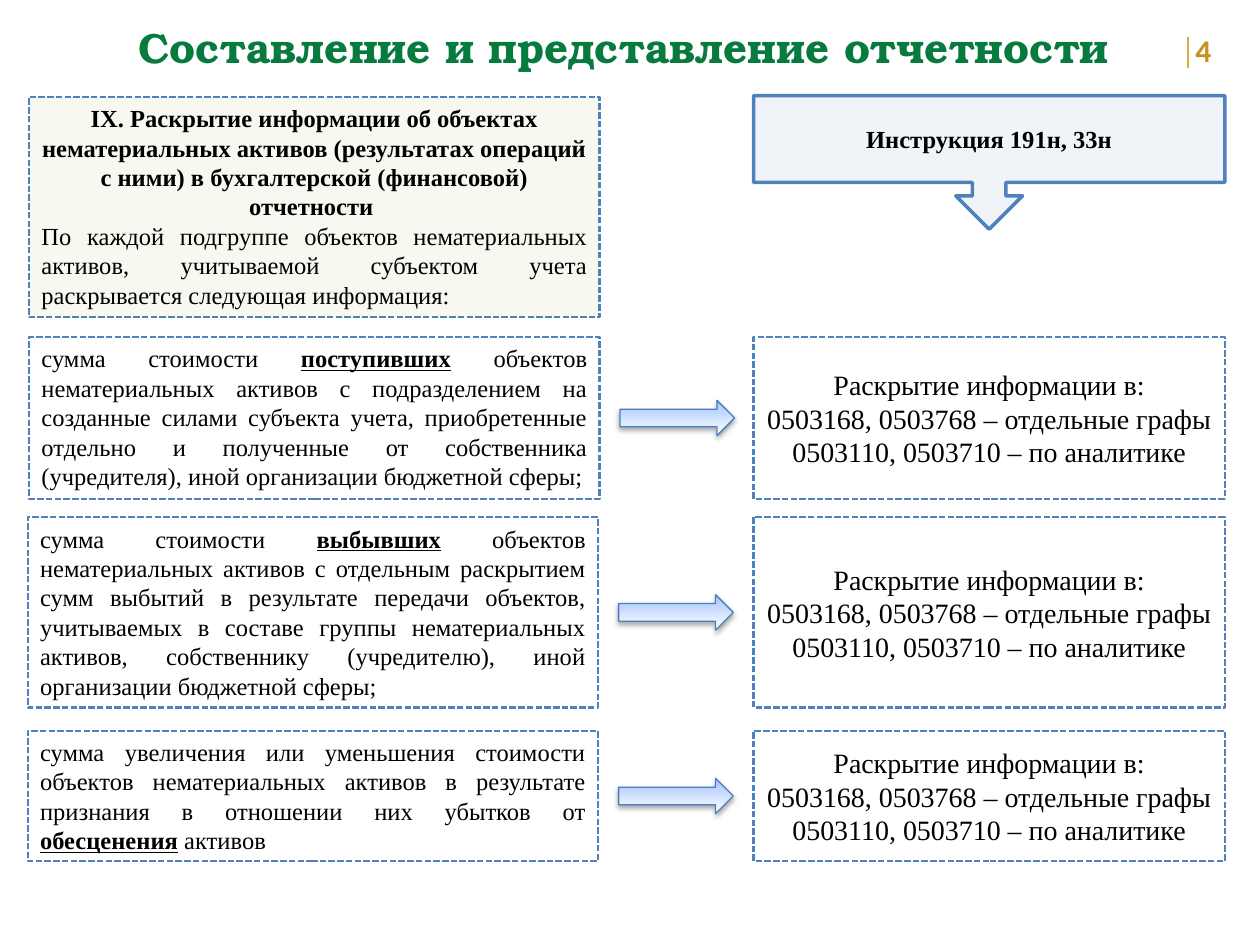
from collections import namedtuple
from dataclasses import dataclass

from lxml import etree
from pptx import Presentation
from pptx import util as u
from pptx.dml.color import RGBColor
from pptx.enum import dml, shapes, text
from pptx.oxml import ns

Pt = u.Pt
Box = namedtuple("Box", "left top width height")


@dataclass(frozen=True)
class Theme:
    title_font: str = "TeX Gyre Bonum"
    number_font: str = "Calibri"
    body_font: str = "Times New Roman"
    title_size: float = 24
    number_size: float = 18
    form_size: float = 16
    body_size: float = 14
    green: str = "077A3E"
    gold: str = "C79023"
    rule: str = "DEAA46"
    black: str = "000000"
    border: str = "4F81BD"
    arrow_border: str = "4B7EBC"
    arrow_light: str = "FFFFFF"
    arrow_dark: str = "A4C4FF"
    intro_fill: str = "EBF1DE"
    callout_fill: str = "DCE6F2"


THEME = Theme()
ALIGN = text.PP_ALIGN
SHAPE = shapes.MSO_SHAPE
LEFT_WIDTH = 326
ARROW_OFFSET = 337.7
ARROW_WIDTH, ARROW_HEIGHT = 65.5, 20.2
RIGHT_LEFT, RIGHT_WIDTH = 430.6, 269.3

INTRO_HEADING = ("IX. Раскрытие информации об объектах нематериальных активов "
                 "(результатах операций с ними) в бухгалтерской (финансовой) отчетности ")
INTRO_BODY = ("По каждой подгруппе объектов нематериальных активов, учитываемой "
              "субъектом учета раскрывается следующая информация:")
FORMS = ["Раскрытие информации в:",
         "0503168, 0503768 – отдельные графы",
         "0503110, 0503710 – по аналитике"]
# Each row: left, top, height, then the text before, inside and after the emphasis.
ROWS = [
    (16.6, 192.6, 92.5, "сумма стоимости ", "поступивших",
     " объектов нематериальных активов с подразделением на созданные силами "
     "субъекта учета, приобретенные отдельно и полученные от собственника "
     "(учредителя), иной организации бюджетной сферы;"),
    (15.8, 295.6, 108.7, "сумма стоимости ", "выбывших",
     " объектов нематериальных активов с отдельным раскрытием сумм выбытий в "
     "результате передачи объектов, учитываемых в составе группы нематериальных "
     "активов, собственнику (учредителю), иной организации бюджетной сферы;"),
    (15.8, 417.6, 74.5,
     "сумма увеличения или уменьшения стоимости объектов нематериальных активов "
     "в результате признания в отношении них убытков от ", "обесценения", " активов"),
]


def rgb(value):
    return RGBColor.from_string(value)


def points(box):
    return [Pt(length) for length in box]


def add_text(frame, content, font=THEME.body_font, size=THEME.body_size,
             color=THEME.black, bold=False, underline=False, align=ALIGN.LEFT,
             new_paragraph=False):
    """Append a run to the last paragraph, or to a new one."""
    paragraph = frame.add_paragraph() if new_paragraph else frame.paragraphs[-1]
    paragraph.alignment = align
    run = paragraph.add_run()
    run.text = content
    run.font.name = font
    run.font.size = Pt(size)
    run.font.color.rgb = rgb(color)
    run.font.bold = bold
    run.font.underline = underline


def add_text_box(slide, box):
    frame = slide.shapes.add_textbox(*points(box)).text_frame
    frame.word_wrap = True
    return frame


def add_panel(slide, box, kind=SHAPE.RECTANGLE, fill=None, opacity=100,
              line_width=1.25, dashed=True, anchor=text.MSO_ANCHOR.TOP):
    """Add an outlined shape and return its text frame."""
    shape = slide.shapes.add_shape(kind, *points(box))
    shape.shadow.inherit = False
    if fill:
        shape.fill.solid()
        shape.fill.fore_color.rgb = rgb(fill)
        color = shape.fill._xPr.find(".//" + ns.qn("a:srgbClr"))
        etree.SubElement(color, ns.qn("a:alpha"), val=str(opacity * 1000))
    else:
        shape.fill.background()
    shape.line.color.rgb = rgb(THEME.border)
    shape.line.width = Pt(line_width)
    if dashed:
        shape.line.dash_style = dml.MSO_LINE.SQUARE_DOT
    frame = shape.text_frame
    frame.word_wrap = True
    frame.vertical_anchor = anchor
    return frame


def add_arrow(slide, box):
    arrow = slide.shapes.add_shape(SHAPE.RIGHT_ARROW, *points(box))
    arrow.fill.gradient()
    arrow.fill.gradient_angle = 90
    for stop, color, position in zip(arrow.fill.gradient_stops,
                                     (THEME.arrow_light, THEME.arrow_dark), (0, 1)):
        stop.color.rgb = rgb(color)
        stop.position = position
    arrow.line.color.rgb = rgb(THEME.arrow_border)
    arrow.line.width = Pt(0.75)
    arrow.shadow.inherit = False
    effects = arrow._element.spPr.find(ns.qn("a:effectLst"))
    shadow = etree.SubElement(effects, ns.qn("a:outerShdw"), blurRad=str(Pt(3.1)),
                              dist=str(Pt(1.8)), dir="5400000", rotWithShape="0")
    color = etree.SubElement(shadow, ns.qn("a:srgbClr"), val=THEME.black)
    etree.SubElement(color, ns.qn("a:alpha"), val="35000")


def add_header(slide, box):
    title = add_text_box(slide, Box(box.left + 61, box.top + 8.6, 591, 36))
    add_text(title, "Составление и представление отчетности", font=THEME.title_font,
             size=THEME.title_size, color=THEME.green, bold=True, align=ALIGN.CENTER)
    right = box.left + box.width
    number = add_text_box(slide, Box(right - 44, box.top + 14.4, 44, 28.8))
    add_text(number, "4", font=THEME.number_font, size=THEME.number_size,
             color=THEME.gold, bold=True)
    rule = slide.shapes.add_connector(
        shapes.MSO_CONNECTOR.STRAIGHT,
        *points((right - 41, box.top + 20.9, right - 41, box.top + 38.9)))
    rule.line.color.rgb = rgb(THEME.rule)
    rule.line.width = Pt(1)
    etree.SubElement(rule._element.spPr, ns.qn("a:effectLst"))


def add_intro(slide, box):
    frame = add_panel(slide, box, fill=THEME.intro_fill, opacity=40)
    add_text(frame, INTRO_HEADING, bold=True, align=ALIGN.CENTER)
    add_text(frame, INTRO_BODY, align=ALIGN.JUSTIFY, new_paragraph=True)


def add_callout(slide, box):
    frame = add_panel(slide, box, kind=SHAPE.DOWN_ARROW_CALLOUT,
                      fill=THEME.callout_fill, opacity=41, line_width=2,
                      dashed=False, anchor=text.MSO_ANCHOR.MIDDLE)
    add_text(frame, "Инструкция 191н, 33н", bold=True, align=ALIGN.CENTER)


def add_row(slide, box, before, emphasis, after):
    """Place a requirement, an arrow and the forms that disclose it."""
    requirement = add_panel(slide, box._replace(width=LEFT_WIDTH))
    for content, strong in ((before, False), (emphasis, True), (after, False)):
        add_text(requirement, content, bold=strong, underline=strong, align=ALIGN.JUSTIFY)
    add_arrow(slide, Box(box.left + ARROW_OFFSET,
                         box.top + (box.height - ARROW_HEIGHT) / 2,
                         ARROW_WIDTH, ARROW_HEIGHT))
    forms = add_panel(slide, Box(RIGHT_LEFT, box.top, RIGHT_WIDTH, box.height),
                      anchor=text.MSO_ANCHOR.MIDDLE)
    for index, line in enumerate(FORMS):
        add_text(forms, line, size=THEME.form_size, align=ALIGN.CENTER,
                 new_paragraph=index > 0)


def main():
    presentation = Presentation()
    presentation.slide_width, presentation.slide_height = Pt(720), Pt(540)
    slide = presentation.slides.add_slide(presentation.slide_layouts[6])
    add_header(slide, Box(0, 0, 720, 50))
    add_intro(slide, Box(16.6, 55.4, LEFT_WIDTH, 126))
    add_callout(slide, Box(RIGHT_LEFT, 54.7, RIGHT_WIDTH, 76.3))
    for left, top, height, *parts in ROWS:
        width = RIGHT_LEFT + RIGHT_WIDTH - left
        add_row(slide, Box(left, top, width, height), *parts)
    presentation.save("out.pptx")


if __name__ == "__main__":
    main()
